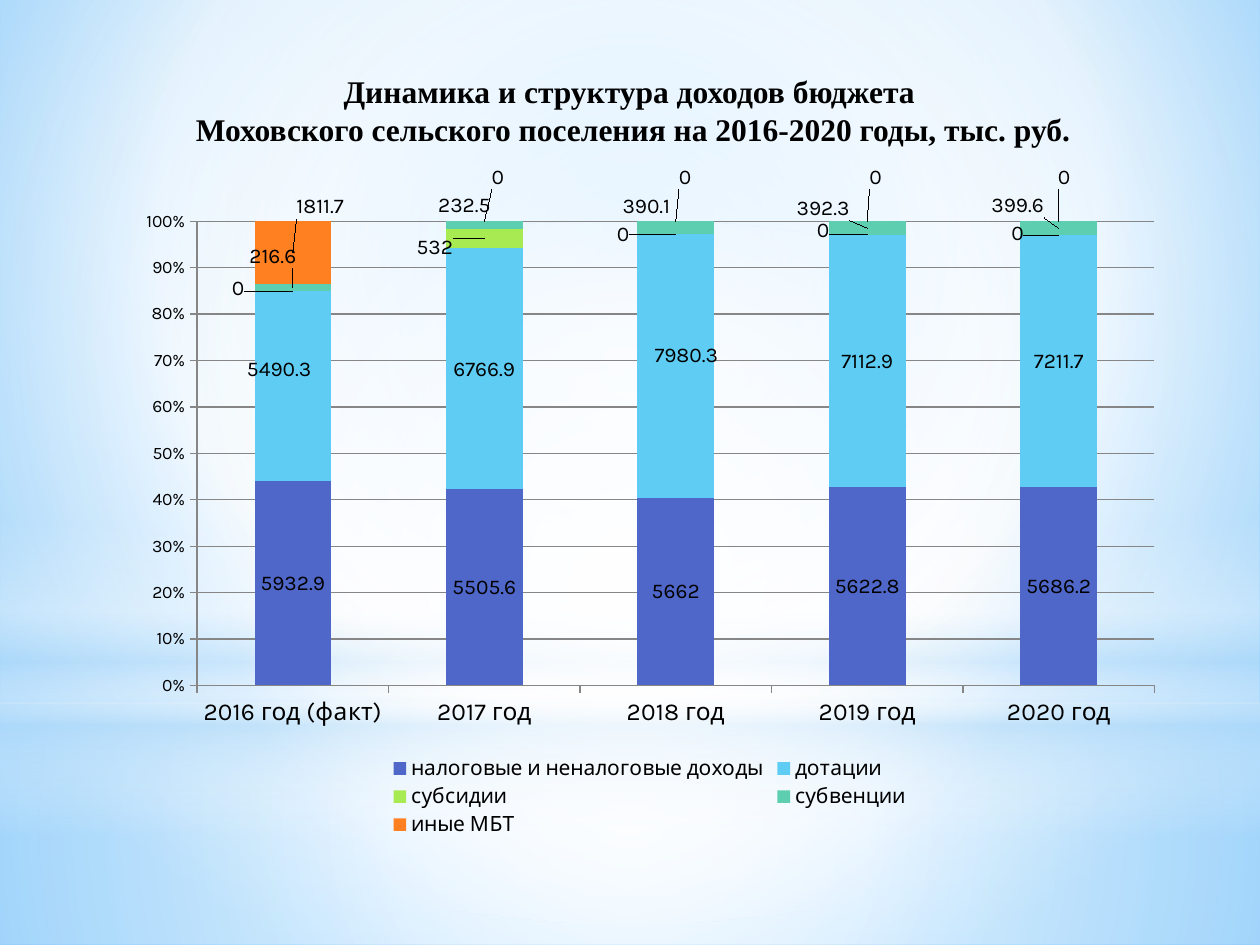
"""Build the slide on the revenue structure of a rural settlement's budget."""
from lxml.etree import SubElement
from pptx import Presentation
from pptx.chart.data import CategoryChartData
from pptx.dml.color import RGBColor
from pptx.enum.chart import XL_CHART_TYPE, XL_LABEL_POSITION, XL_LEGEND_POSITION, XL_TICK_MARK
from pptx.enum.shapes import MSO_SHAPE
from pptx.enum.text import MSO_ANCHOR, PP_ALIGN
from pptx.oxml.ns import qn
from pptx.util import Inches, Pt

COLOURS = {
    "white": "FFFFFF", "pale": "B4DCFA", "sky": "9ED5FF", "azure": "5BB9FF",
    "black": "000000", "grid": "868686", "own": "4E67C8", "grants": "5ECCF3",
    "subsidies": "A7EA52", "subventions": "5DCEAF", "other": "FF8021",
}


def paint_gradient(parent, stops, centre=None):
    gradient = parent.find(qn("a:gradFill"))
    for child in list(gradient):
        gradient.remove(child)
    stop_list = SubElement(gradient, qn("a:gsLst"))
    for position, colour, opacity in stops:
        stop = SubElement(stop_list, qn("a:gs"), pos=str(position * 1000))
        tint = SubElement(stop, qn("a:srgbClr"), val=COLOURS[colour])
        if opacity < 100:
            SubElement(tint, qn("a:alpha"), val=str(opacity * 1000))
    if centre:
        shade = SubElement(gradient, qn("a:path"), path="circle")
        sides = {side: str(share * 1000) for side, share in zip("ltrb", centre)}
        SubElement(shade, qn("a:fillToRect"), **sides)
    else:
        SubElement(gradient, qn("a:lin"), ang="5400000", scaled="0")


def set_layout(element, index, **places):
    layout = element.find(qn("c:layout"))
    if layout is not None:
        element.remove(layout)
    layout = element.makeelement(qn("c:layout"))
    element.insert(index, layout)
    manual = SubElement(layout, qn("c:manualLayout"))
    if "w" in places:
        if element.tag == qn("c:plotArea"):
            SubElement(manual, qn("c:layoutTarget"), val="inner")
        for mode in ("xMode", "yMode"):
            SubElement(manual, qn(f"c:{mode}"), val="edge")
    for name, value in places.items():
        SubElement(manual, qn(f"c:{name}"), val=str(value))


deck = Presentation()
deck.slide_width, deck.slide_height = Inches(10), Inches(7.5)
width, height = deck.slide_width, deck.slide_height
page = deck.slides.add_slide(deck.slide_layouts[5])
page.background.fill.gradient()
paint_gradient(page.element.find(".//" + qn("p:bgPr")),
               [(0, "sky", 100), (60, "white", 100), (100, "azure", 100)], (20, 10, 20, 60))

middle = (50, 50, 50, 50)
glows = [
    (MSO_SHAPE.RECTANGLE, 0.744, 0.256, middle,
     [(0, "white", 91), (37, "white", 76), (100, "pale", 79)]),
    (MSO_SHAPE.RECTANGLE, 0, 0.744, middle,
     [(0, "white", 89), (48, "white", 62), (100, "pale", 79)]),
    (MSO_SHAPE.RECTANGLE, 0.55, 0.333, None,
     [(0, "white", 0), (29, "white", 30), (45, "pale", 40),
      (55, "white", 26), (65, "pale", 60), (100, "white", 0)]),
    (MSO_SHAPE.OVAL, 0.233, 0.744, middle, [(0, "white", 100), (56, "white", 0)]),
]
for kind, top, tall, centre, stops in glows:
    glow = page.shapes.add_shape(kind, 0, int(height * top), width, int(height * tall))
    glow.shadow.inherit = False
    glow.line.fill.background()
    glow.fill.gradient()
    paint_gradient(glow.element.spPr, stops, centre)

title = page.shapes.title
page.shapes.element.append(title.element)
for name, value in {"left": 0.98, "top": 0.52, "width": 8.03, "height": 0.71}.items():
    setattr(title, name, Inches(value))
frame = title.text_frame
frame.word_wrap = True
frame.vertical_anchor = MSO_ANCHOR.MIDDLE
frame.text = ("Динамика и структура доходов бюджета\v"
              " Моховского сельского поселения на 2016-2020 годы, тыс. руб.")
frame.paragraphs[0].alignment = PP_ALIGN.CENTER
for span in frame.paragraphs[0].runs:
    for name, value in {"name": "Times New Roman", "size": Pt(18), "bold": True}.items():
        setattr(span.font, name, value)
    span.font.color.rgb = RGBColor.from_string(COLOURS["black"])

revenues = [
    ("налоговые и неналоговые доходы", "own", (5932.9, 5505.6, 5662, 5622.8, 5686.2), {}),
    ("дотации", "grants", (5490.3, 6766.9, 7980.3, 7112.9, 7211.7),
     {0: (-1.3, -2.5), 2: (1, -1.6)}),
    ("субсидии", "subsidies", (0, 532, 0, 0, 0),
     {0: (-5.2, -0.4), 1: (-4.7, 1.3), 2: (-5, 0.1), 3: (-4.2, -0.7), 4: (-3.9, -0.3)}),
    ("субвенции", "subventions", (216.6, 232.5, 390.1, 392.3, 399.6),
     {0: (-1.9, -4.7), 1: (-1.9, -3), 2: (-2.8, -3.1), 3: (-4.2, -3), 4: (-3.9, -3.4)}),
    ("иные МБТ", "other", (1811.7, 0, 0, 0, 0),
     {0: (2.6, -6.8), 1: (1.3, -6.5), 2: (0.9, -6.5), 3: (0.8, -6.5), 4: (0.5, -6.5)}),
]
data = CategoryChartData()
data.categories = ["2016 год (факт)"] + [f"{year} год" for year in range(2017, 2021)]
for name, colour, values, shifts in revenues:
    data.add_series(name, values)
chart = page.shapes.add_chart(XL_CHART_TYPE.COLUMN_STACKED_100, Inches(0.98), Inches(1.31),
                              Inches(8.35), Inches(5.36), data).chart
chart.has_title = False
chart.font.name, chart.font.size = "Karla", Pt(10)
chart.font.color.rgb = RGBColor.from_string(COLOURS["black"])
plot = chart.plots[0]
plot.gap_width, plot.overlap = 150, 100
set_layout(chart.element.find(".//" + qn("c:plotArea")), 0, x=0.07, y=0.08, w=0.91, h=0.69)

for series, (name, colour, values, shifts) in zip(plot.series, revenues):
    series.format.fill.solid()
    series.format.fill.fore_color.rgb = RGBColor.from_string(COLOURS[colour])
    series.data_labels.show_value = True
    series.data_labels.font.size = Pt(12)
    for index, (across, down) in shifts.items():
        label = series.points[index].data_label
        label.font.size = Pt(12)
        label.position = XL_LABEL_POSITION.CENTER
    for element, (across, down) in zip(series.data_labels._element.findall(qn("c:dLbl")),
                                       shifts.values()):
        set_layout(element, 1, x=across / 100, y=down / 100)

for axis, size in ((chart.category_axis, 14), (chart.value_axis, 10)):
    axis.major_tick_mark = XL_TICK_MARK.OUTSIDE
    axis.tick_labels.font.size = Pt(size)
    axis.format.line.color.rgb = RGBColor.from_string(COLOURS["grid"])
values_axis = chart.value_axis
values_axis.maximum_scale, values_axis.major_unit = 1, 0.1
values_axis.tick_labels.number_format = "0%"
values_axis.tick_labels.number_format_is_linked = False
values_axis.major_gridlines.format.line.color.rgb = RGBColor.from_string(COLOURS["grid"])

chart.has_legend = True
chart.legend.position = XL_LEGEND_POSITION.BOTTOM
chart.legend.include_in_layout = False
chart.legend.font.size = Pt(12)
set_layout(chart.element.find(".//" + qn("c:legend")), 1, x=0.25, y=0.87, w=0.5, h=0.13)

deck.save("out.pptx")
